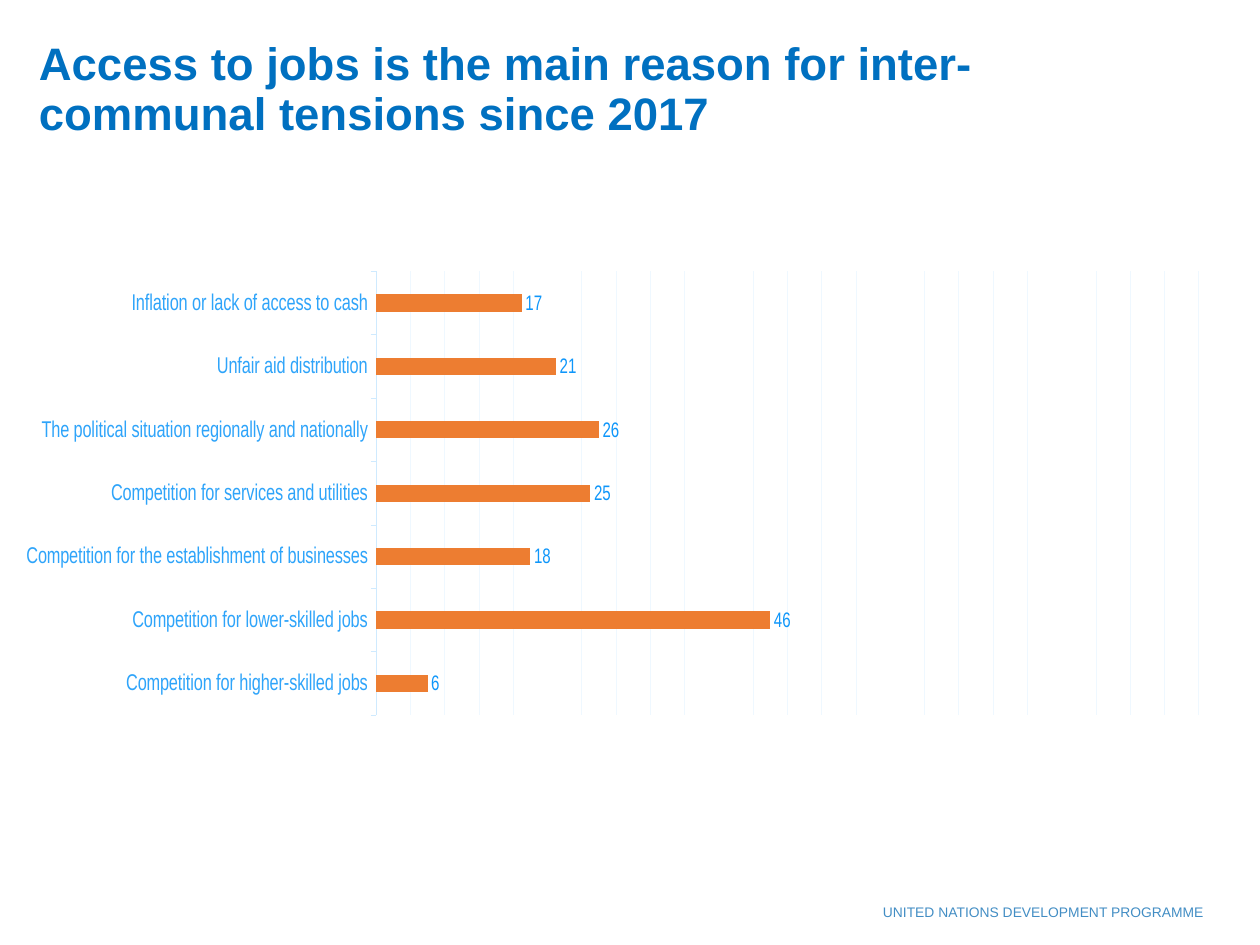
from lxml import etree
from pptx import Presentation
from pptx.chart.data import CategoryChartData
from pptx.dml.color import RGBColor
from pptx.enum.chart import XL_CHART_TYPE as ChartType
from pptx.enum.chart import XL_LABEL_POSITION as LabelPosition
from pptx.enum.chart import XL_TICK_MARK as TickMark
from pptx.enum.text import MSO_ANCHOR as Anchor
from pptx.enum.text import PP_ALIGN as Align
from pptx.oxml import parse_xml
from pptx.oxml.ns import nsdecls, qn
from pptx.util import Pt

TITLE = "Access to jobs is the main reason for inter-communal tensions since 2017"
FOOTER = "UNITED NATIONS DEVELOPMENT PROGRAMME"
REASONS = [  # listed from the bottom bar upwards
    ("Competition for higher-skilled jobs", 6),
    ("Competition for lower-skilled jobs", 46),
    ("Competition for the establishment of businesses", 18),
    ("Competition for services and utilities", 25),
    ("The political situation regionally and nationally", 26),
    ("Unfair aid distribution", 21),
    ("Inflation or lack of access to cash", 17),
]
PLOT_AREA = {"x": 0.005, "y": 0.022, "w": 0.976, "h": 0.823}  # shares of the chart
FONT = "Arial"


def rgb(value):
    return RGBColor.from_string(value)


def style(font, size, color, bold=False):
    font.name, font.size, font.bold = FONT, Pt(size), bold
    font.color.rgb = rgb(color)


def add_text(slide, text, box, *, size, color, bold=False, align=Align.LEFT,
             anchor=Anchor.TOP, spacing=1.0, opacity=100):
    frame = slide.shapes.add_textbox(*map(Pt, box)).text_frame
    frame.word_wrap = True
    frame.vertical_anchor = anchor
    paragraph = frame.paragraphs[0]
    paragraph.alignment, paragraph.line_spacing = align, spacing
    run = paragraph.add_run()
    run.text = text
    style(run.font, size, color, bold)
    if opacity < 100:
        fill = run.font.fill._xPr.find(qn("a:solidFill"))
        etree.SubElement(fill[0], qn("a:alpha")).set("val", str(opacity * 1000))


def place_plot(chart):
    """Pin the inner plot area, leaving the labels outside it."""
    sizes = "".join(f'<c:{side} val="{share}"/>' for side, share in PLOT_AREA.items())
    layout = parse_xml(
        f'<c:layout {nsdecls("c")}><c:manualLayout><c:layoutTarget val="inner"/>'
        f'<c:xMode val="edge"/><c:yMode val="edge"/>{sizes}</c:manualLayout></c:layout>')
    plot_area = chart._chartSpace.chart.plotArea
    for old in plot_area.findall(qn("c:layout")):
        plot_area.remove(old)
    plot_area.insert(0, layout)


def style_minor_gridlines(axis, color, width):
    axis.has_minor_gridlines = True
    axis._element.find(qn("c:minorGridlines")).append(parse_xml(
        f'<c:spPr {nsdecls("c", "a")}><a:ln w="{Pt(width)}"><a:solidFill>'
        f'<a:srgbClr val="{color}"/></a:solidFill></a:ln></c:spPr>'))


def add_reasons_chart(slide, box):
    data = CategoryChartData(number_format="#,##0")
    data.categories = [reason for reason, _ in REASONS]
    data.add_series("Series 1", [share for _, share in REASONS])
    chart = slide.shapes.add_chart(ChartType.BAR_CLUSTERED, *map(Pt, box), data).chart
    chart.has_legend = chart.has_title = False
    style(chart.font, 10, "0468B1")
    place_plot(chart)

    reasons = chart.category_axis
    reasons.major_tick_mark = TickMark.OUTSIDE
    reasons.format.line.color.rgb = rgb("CFEAFE")
    reasons.format.line.width = Pt(0.75)
    style(reasons.tick_labels.font, 13, "2EA4FA")

    shares = chart.value_axis
    shares.visible = False
    shares.minimum_scale, shares.maximum_scale = 0, 100
    shares.major_unit, shares.minor_unit = 20, 4
    shares.has_major_gridlines = False
    style_minor_gridlines(shares, "EFF8FF", 0.75)

    bars = chart.plots[0]
    bars.gap_width, bars.vary_by_categories = 269, False
    series = bars.series[0]
    series.format.fill.solid()
    series.format.fill.fore_color.rgb = rgb("ED7D31")
    labels = series.data_labels
    labels.show_value, labels.position = True, LabelPosition.OUTSIDE_END
    labels.number_format, labels.number_format_is_linked = "#,##0", False
    style(labels.font, 12, "0E96FA")


def main():
    deck = Presentation()
    deck.slide_width, deck.slide_height = Pt(720), Pt(540)
    slide = deck.slides.add_slide(deck.slide_layouts[6])
    add_text(slide, FOOTER, (461.5, 512.6, 233.3, 16.6), size=7.9, color="0468B1",
             align=Align.RIGHT, opacity=75)
    add_text(slide, TITLE, (15.1, 24.5, 620.6, 59), size=26, color="0070C0",
             bold=True, anchor=Anchor.BOTTOM, spacing=0.9)
    add_reasons_chart(slide, (15.1, 148.3, 699.1, 308.2))
    deck.save("out.pptx")


if __name__ == "__main__":
    main()
